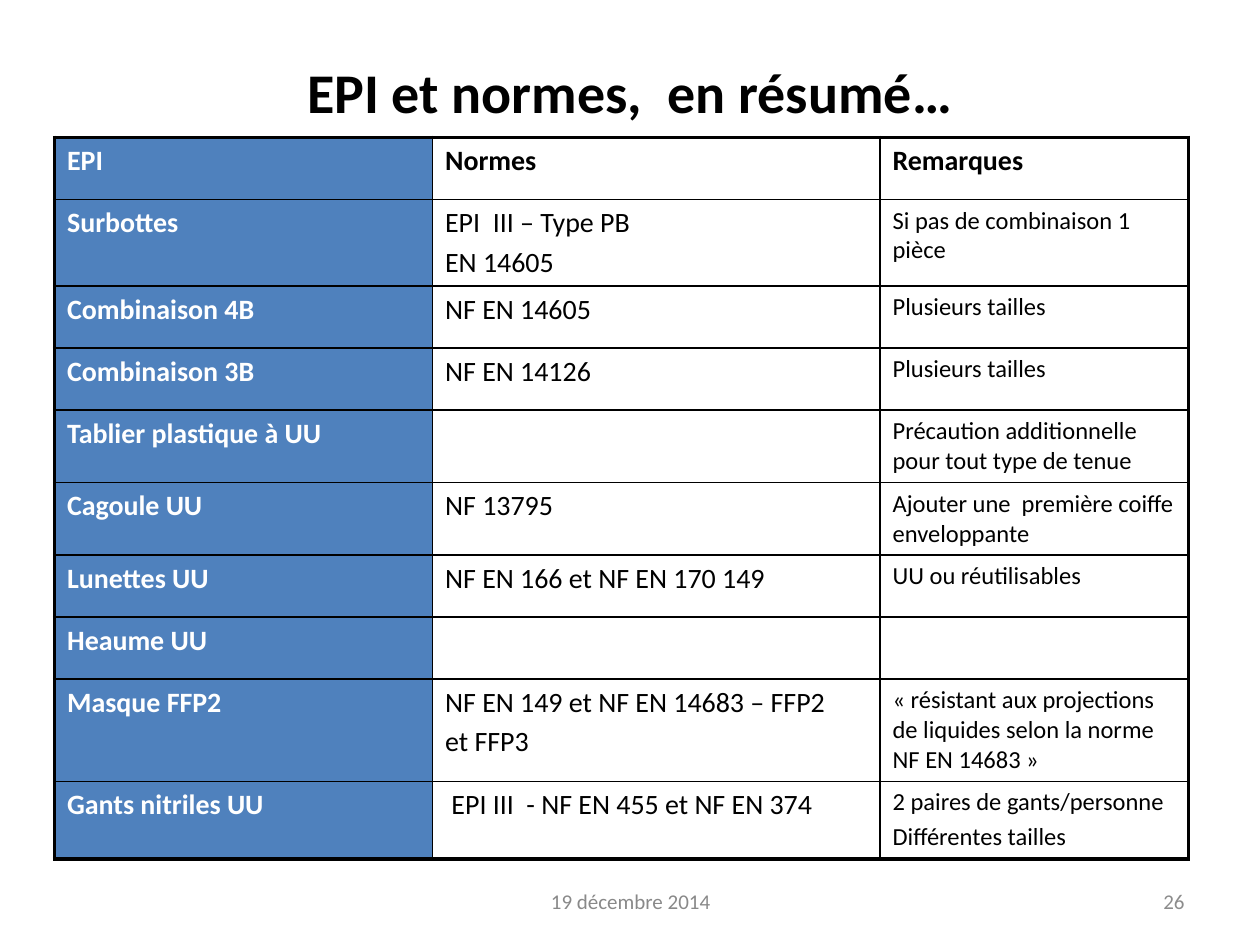
import pptx
import pptx.dml.color
import pptx.enum.text
import pptx.oxml
import pptx.oxml.ns
import pptx.util
from pptx.dml.color import RGBColor
from pptx.enum.text import PP_ALIGN
from pptx.util import Cm

BLACK = RGBColor(0x00, 0x00, 0x00)
WHITE = RGBColor(0xFF, 0xFF, 0xFF)
BLUE = RGBColor(0x4F, 0x81, 0xBD)
GREY = RGBColor(0x89, 0x89, 0x89)
PAGE_GREY = RGBColor(0x8C, 0x8C, 0x8C)

THIN, THICK = 1, 2.25
COLUMN_WIDTHS = [7.62, 9.02, 6.22]
COLUMN_SIZES = [16, 16, 14]

# Row height in cm, then the three cells
ROWS = [
    (1.25, "EPI", "Normes", "Remarques"),
    (1.75, "Surbottes", "EPI  III – Type PB\nEN 14605", "Si pas de combinaison 1 pièce"),
    (1.25, "Combinaison 4B", "NF EN 14605", "Plusieurs tailles"),
    (1.25, "Combinaison 3B", "NF EN 14126", "Plusieurs tailles"),
    (1.46, "Tablier plastique à UU", "",
     "Précaution additionnelle  pour tout type de tenue"),
    (1.46, "Cagoule UU", "NF 13795", "Ajouter une  première coiffe enveloppante"),
    (1.25, "Lunettes UU", "NF EN 166 et NF EN 170 149", "UU ou réutilisables"),
    (1.25, "Heaume UU", "", ""),
    (2.06, "Masque FFP2", "NF EN 149 et NF EN 14683 – FFP2\net FFP3",
     "« résistant aux projections de liquides selon la norme NF EN 14683 »"),
    (1.57, "Gants nitriles UU", " EPI III  - NF EN 455 et NF EN 374",
     "2 paires de gants/personne\nDifférentes tailles"),
]


class SlideBuilder:
    font = "Calibri"

    def __init__(self, prs):
        self.s = prs.slides.add_slide(prs.slide_layouts[6])

    def style(self, tf, size, color, bold=False, align=PP_ALIGN.LEFT):
        for i, p in enumerate(tf.paragraphs):
            p.alignment = align
            if i:
                p.space_before = pptx.util.Pt(size * 0.2)
            for r in p.runs:
                r.font.name = self.font
                r.font.size = pptx.util.Pt(size)
                r.font.bold = bold
                r.font.color.rgb = color

    def text(self, text, left, top, width, height, size, color, align, bold=False):
        sp = self.s.shapes.add_textbox(Cm(left), Cm(top), Cm(width), Cm(height))
        tf = sp.text_frame
        tf.word_wrap = True
        tf.vertical_anchor = pptx.enum.text.MSO_ANCHOR.MIDDLE
        tf.text = text
        self.style(tf, size, color, bold, align)

    def borders(self, cell, widths):
        tc_pr = cell._tc.get_or_add_tcPr()
        for side, width in zip("LRTB", widths):
            tc_pr.append(pptx.oxml.parse_xml(
                f'<a:ln{side} {pptx.oxml.ns.nsdecls("a")} w="{pptx.util.Pt(width)}">'
                f'<a:solidFill><a:srgbClr val="{BLACK}"/></a:solidFill></a:ln{side}>'))

    def table(self, rows, left, top):
        last_row, last_col = len(rows) - 1, len(COLUMN_WIDTHS) - 1
        height = sum(row[0] for row in rows)
        table = self.s.shapes.add_table(
            len(rows), len(COLUMN_WIDTHS), Cm(left), Cm(top),
            Cm(sum(COLUMN_WIDTHS)), Cm(height)).table
        table.first_row = table.horz_banding = False
        for column, width in zip(table.columns, COLUMN_WIDTHS):
            column.width = Cm(width)
        for i, (row_height, *texts) in enumerate(rows):
            table.rows[i].height = Cm(row_height)
            for j, text in enumerate(texts):
                cell = table.cell(i, j)
                # Thick lines only on the outer edge
                edges = (j == 0, j == last_col, i == 0, i == last_row)
                self.borders(cell, [THICK if edge else THIN for edge in edges])
                if j == 0:
                    cell.fill.solid()
                    cell.fill.fore_color.rgb = BLUE
                else:
                    cell.fill.background()
                cell.text_frame.text = text
                self.style(cell.text_frame, 16 if i == 0 else COLUMN_SIZES[j],
                           WHITE if j == 0 else BLACK, bold=i == 0 or j == 0)


def main():
    prs = pptx.Presentation()
    prs.slide_width, prs.slide_height = Cm(25.4), Cm(19.05)
    slide = SlideBuilder(prs)

    # Footer
    slide.text("19 décembre 2014", 8.69, 17.65, 8.05, 1.02, 12, GREY, PP_ALIGN.CENTER)
    slide.text("26", 18.21, 17.65, 5.92, 1.02, 12, PAGE_GREY, PP_ALIGN.RIGHT)

    # Title
    slide.text("EPI et normes,  en résumé…", 1.27, 0.76, 22.86, 2.16, 32, BLACK,
               PP_ALIGN.CENTER, bold=True)

    # Equipment and standards
    slide.table(ROWS, 1.1, 2.77)

    prs.save("out.pptx")


if __name__ == "__main__":
    main()
